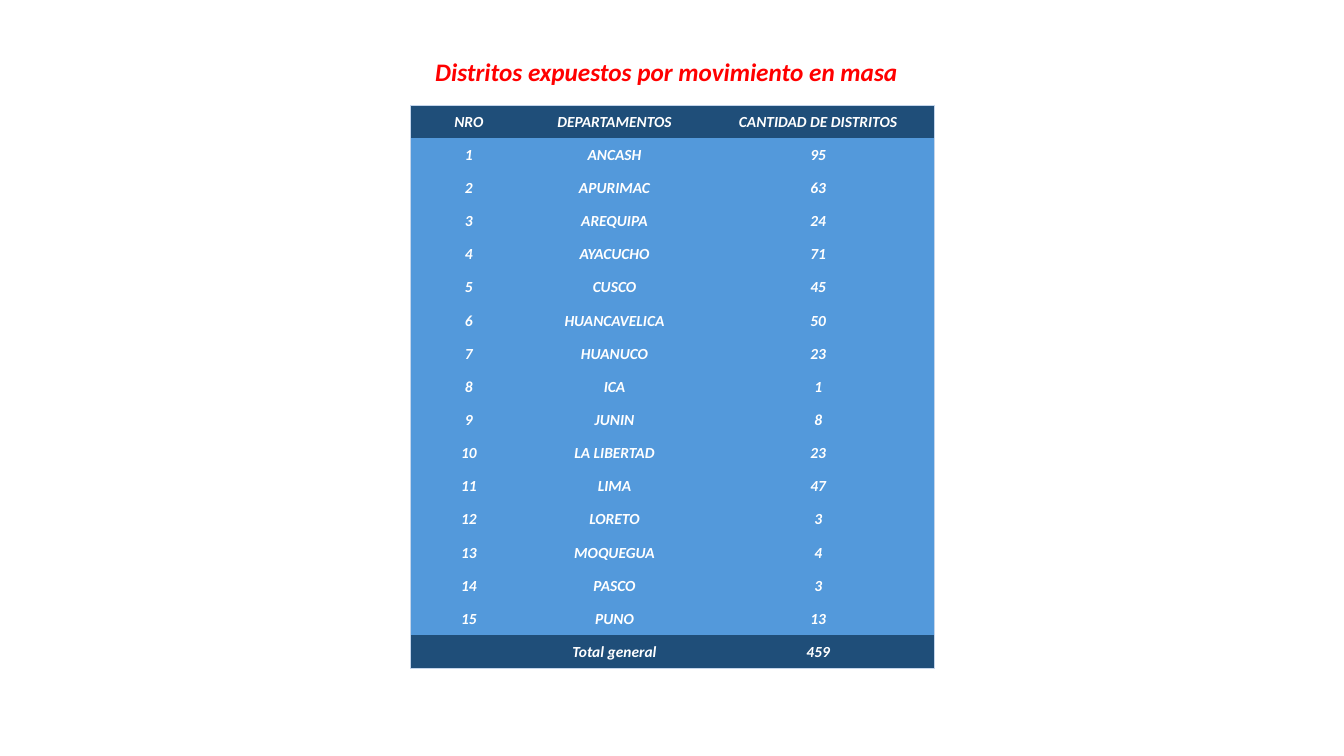
from dataclasses import dataclass

from lxml.etree import SubElement
from pptx import Presentation
from pptx.dml.color import RGBColor
from pptx.enum.text import MSO_ANCHOR, MSO_AUTO_SIZE, PP_ALIGN
from pptx.oxml.ns import qn
from pptx.util import Inches, Pt

TITLE = "Distritos expuestos por movimiento en masa"
HEADER = ("NRO", "DEPARTAMENTOS", "CANTIDAD DE DISTRITOS")
DISTRICTS = {
    "ANCASH": 95,
    "APURIMAC": 63,
    "AREQUIPA": 24,
    "AYACUCHO": 71,
    "CUSCO": 45,
    "HUANCAVELICA": 50,
    "HUANUCO": 23,
    "ICA": 1,
    "JUNIN": 8,
    "LA LIBERTAD": 23,
    "LIMA": 47,
    "LORETO": 3,
    "MOQUEGUA": 4,
    "PASCO": 3,
    "PUNO": 13,
}
TOTAL_LABEL = "Total general"
TOTAL = 459


@dataclass(frozen=True)
class Theme:
    font: str = "Calibri"
    title_size: float = 18
    cell_size: float = 11
    title_color: str = "FF0000"
    text_color: str = "FFFFFF"
    band_fill: str = "1F4E79"
    body_fill: str = "5399DB"
    border: str = "C4D5EB"
    border_width: float = 0.5


THEME = Theme()
SLIDE_WIDTH, SLIDE_HEIGHT = Inches(13.33), Inches(7.5)
TITLE_BOX = (4.16, 0.51, 4.9, 0.4)
TABLE_LEFT, TABLE_TOP, TABLE_HEIGHT = 4.07, 1.04, 5.59
COLUMN_WIDTHS = (1.16, 1.73, 2.31)


def write(text_frame, text, size, color):
    paragraph = text_frame.paragraphs[0]
    paragraph.alignment = PP_ALIGN.CENTER
    if not text:
        return
    run = paragraph.add_run()
    run.text = text
    run.font.name = THEME.font
    run.font.size = Pt(size)
    run.font.bold = run.font.italic = True
    run.font.color.rgb = RGBColor.from_string(color)


def set_borders(cell, outer_sides):
    """Draw the given sides (letters among L, R, T, B) and clear the others."""
    properties = cell._tc.get_or_add_tcPr()
    for side in "LRTB":
        line = SubElement(properties, qn(f"a:ln{side}"), w=str(Pt(THEME.border_width)))
        if side in outer_sides:
            fill = SubElement(line, qn("a:solidFill"))
            SubElement(fill, qn("a:srgbClr"), val=THEME.border)
        else:
            SubElement(line, qn("a:noFill"))


def add_title(slide):
    title = slide.shapes.title
    title.left, title.top, title.width, title.height = map(Inches, TITLE_BOX)
    frame = title.text_frame
    frame.word_wrap = False
    frame.auto_size = MSO_AUTO_SIZE.NONE
    frame.vertical_anchor = MSO_ANCHOR.MIDDLE
    write(frame, TITLE, THEME.title_size, THEME.title_color)


def add_district_table(slide):
    numbered = [
        (str(number), department, str(count))
        for number, (department, count) in enumerate(DISTRICTS.items(), 1)
    ]
    rows = [HEADER, *numbered, ("", TOTAL_LABEL, str(TOTAL))]
    last_row, last_column = len(rows) - 1, len(HEADER) - 1
    table = slide.shapes.add_table(
        len(rows), len(HEADER), Inches(TABLE_LEFT), Inches(TABLE_TOP),
        Inches(sum(COLUMN_WIDTHS)), Inches(TABLE_HEIGHT),
    ).table
    table.horz_banding = False
    for column, width in zip(table.columns, COLUMN_WIDTHS):
        column.width = Inches(width)

    for row_index, values in enumerate(rows):
        is_band = row_index in (0, last_row)
        for column_index, value in enumerate(values):
            cell = table.cell(row_index, column_index)
            cell.margin_left = cell.margin_right = cell.margin_top = Inches(0.01)
            cell.margin_bottom = 0
            cell.vertical_anchor = MSO_ANCHOR.MIDDLE
            at_edge = {
                "L": column_index == 0,
                "R": column_index == last_column,
                "T": row_index == 0,
                "B": row_index == last_row,
            }
            set_borders(cell, [side for side, outer in at_edge.items() if outer])
            cell.fill.solid()
            fill = THEME.band_fill if is_band else THEME.body_fill
            cell.fill.fore_color.rgb = RGBColor.from_string(fill)
            write(cell.text_frame, value, THEME.cell_size, THEME.text_color)


def main():
    presentation = Presentation()
    presentation.slide_width, presentation.slide_height = SLIDE_WIDTH, SLIDE_HEIGHT
    slide = presentation.slides.add_slide(presentation.slide_layouts.get_by_name("Title Only"))
    add_title(slide)
    add_district_table(slide)
    presentation.save("out.pptx")


if __name__ == "__main__":
    main()
